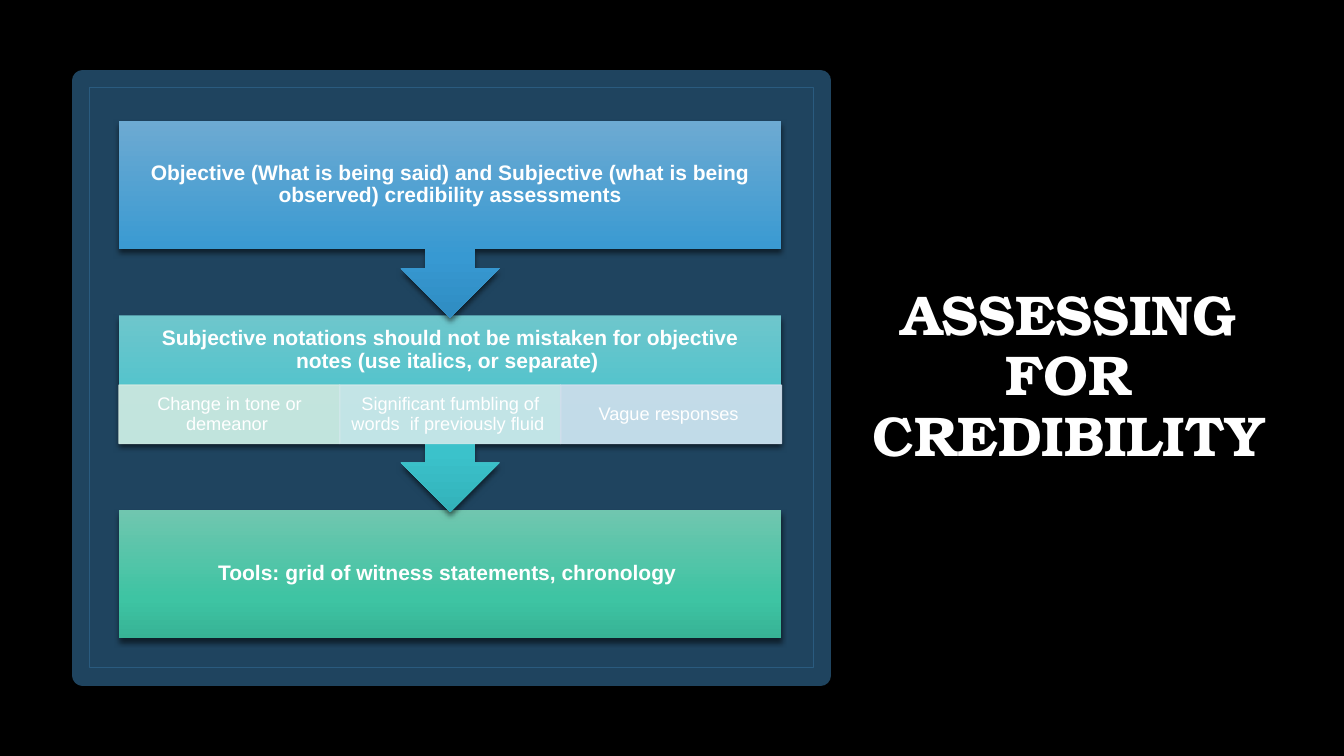
from dataclasses import dataclass

from lxml import etree
from pptx import Presentation
from pptx.dml.color import RGBColor
from pptx.enum.shapes import MSO_SHAPE
from pptx.enum.text import MSO_ANCHOR, PP_ALIGN
from pptx.oxml.ns import qn
from pptx.util import Inches, Pt

RECTANGLE = MSO_SHAPE.RECTANGLE
CALLOUT = MSO_SHAPE.DOWN_ARROW_CALLOUT
MIDDLE = MSO_ANCHOR.MIDDLE
CENTER = PP_ALIGN.CENTER

TITLE = "ASSESSING FOR CREDIBILITY"
STEPS = [
    {
        "heading": "Objective (What is being said) and Subjective (what is being observed) credibility assessments",
        "gradient": [(0, "6DAAD2"), (69, "3799D2"), (100, "2F8CC2")],
        "signs": [],
    },
    {
        "heading": "Subjective notations should not be mistaken for objective notes (use italics, or separate) ",
        "gradient": [(0, "6EC6CC"), (69, "3BC2CB"), (100, "33B2BA")],
        "signs": [
            ("Change in tone or demeanor ", "D0E8E0"),
            ("Significant fumbling of words  if previously fluid ", "D0E8EA"),
            ("Vague responses ", "D0DEEC"),
        ],
    },
    {
        "heading": "Tools: grid of witness statements, chronology ",
        "gradient": [(0, "70C6AF"), (69, "3EC4A3"), (100, "37B395")],
        "signs": [],
    },
]


@dataclass(frozen=True)
class Theme:
    background: str = "000000"
    panel: str = "1F445F"
    frame: str = "2A5B7F"
    text: str = "FFFFFF"
    shadow: str = "000000"
    title_font: str = "TeX Gyre Bonum"
    body_font: str = "Arial"
    title_size: int = 40
    heading_size: int = 15
    sign_size: int = 13


THEME = Theme()

STEP_LEFT, STEP_TOP, STEP_WIDTH = 1.18, 1.2, 6.57
STEP_PITCH, BOX_HEIGHT, CALLOUT_HEIGHT = 1.93, 1.27, 1.95
SIGN_OFFSET, SIGN_HEIGHT = 0.69, 0.58


def write(holder, text, *, size, font=THEME.body_font, bold=False, insets=(0, 0, 0, 0)):
    frame = holder.text_frame
    frame.word_wrap = True
    frame.vertical_anchor = MIDDLE
    frame.margin_left, frame.margin_top, frame.margin_right, frame.margin_bottom = map(Inches, insets)
    paragraph = frame.paragraphs[0]
    paragraph.alignment = CENTER
    paragraph.line_spacing = 0.9
    run = paragraph.add_run()
    run.text = text
    run.font.name = font
    run.font.size = Pt(size)
    run.font.bold = bold
    run.font.color.rgb = RGBColor.from_string(THEME.text)


def add_block(shapes, preset, box, *, fill=None, line=None, line_width=1):
    block = shapes.add_shape(preset, *map(Inches, box))
    block.shadow.inherit = False
    if fill:
        block.fill.solid()
        block.fill.fore_color.rgb = RGBColor.from_string(fill)
    else:
        block.fill.background()
    if line:
        block.line.color.rgb = RGBColor.from_string(line)
        block.line.width = Pt(line_width)
    else:
        block.line.fill.background()
    return block


def add_color(parent, color, alpha=None):
    element = etree.SubElement(parent, qn("a:srgbClr"), val=color)
    if alpha is not None:
        etree.SubElement(element, qn("a:alpha"), val=str(alpha * 1000))


def cast_shadow(block, alpha, blur, distance):
    effects = block.element.spPr.find(qn("a:effectLst"))
    shadow = etree.SubElement(
        effects, qn("a:outerShdw"), blurRad=str(Pt(blur)), dist=str(Pt(distance)),
        dir="5400000", algn="ctr", rotWithShape="0",
    )
    add_color(shadow, THEME.shadow, alpha)


def shade(block, gradient):
    block.fill.gradient()
    block.fill.gradient_angle = 270
    stops = block.element.spPr.find(".//" + qn("a:gsLst"))
    for stop in list(stops):
        stops.remove(stop)
    for position, color in gradient:
        add_color(etree.SubElement(stops, qn("a:gs"), pos=str(position * 1000)), color)


def make_translucent(block, alpha):
    for color in block.element.spPr.iter(qn("a:srgbClr")):
        etree.SubElement(color, qn("a:alpha"), val=str(alpha * 1000))


def add_step(shapes, step, top, is_last):
    preset, height = (RECTANGLE, BOX_HEIGHT) if is_last else (CALLOUT, CALLOUT_HEIGHT)
    block = add_block(shapes, preset, (STEP_LEFT, top, STEP_WIDTH, height))
    shade(block, step["gradient"])
    cast_shadow(block, 54, 4, 3)
    signs = step["signs"]
    bottom_inset = 0.12 + (BOX_HEIGHT - SIGN_OFFSET if signs else 0)
    write(block, step["heading"], size=THEME.heading_size, bold=True,
          insets=(0.12, 0.12, 0.12, bottom_inset))
    for column, (sign, tint) in enumerate(signs):
        width = STEP_WIDTH / len(signs)
        box = (STEP_LEFT + column * width, top + SIGN_OFFSET, width, SIGN_HEIGHT)
        cell = add_block(shapes, RECTANGLE, box, fill=tint, line=tint)
        make_translucent(cell, 90)
        write(cell, sign, size=THEME.sign_size, insets=(0.1, 0.02, 0.1, 0.02))


def main():
    deck = Presentation()
    deck.slide_width, deck.slide_height = Inches(13.33), Inches(7.5)
    slide = deck.slides.add_slide(deck.slide_layouts[5])
    slide.background.fill.solid()
    slide.background.fill.fore_color.rgb = RGBColor.from_string(THEME.background)

    title = slide.shapes.title
    title.left, title.top, title.width, title.height = map(Inches, (8.61, 0.69, 3.98, 6.11))
    write(title, TITLE, size=THEME.title_size, font=THEME.title_font, bold=True)

    panel = add_block(slide.shapes, RECTANGLE, (0.82, 0.8, 7.32, 5.9),
                      fill=THEME.panel, line=THEME.panel, line_width=15)
    cast_shadow(panel, 40, 4.3, 1.4)
    add_block(slide.shapes, RECTANGLE, (0.89, 0.87, 7.18, 5.75), line=THEME.frame)

    diagram = slide.shapes.add_group_shape()
    last = len(STEPS) - 1
    for index, step in reversed(list(enumerate(STEPS))):
        add_step(diagram.shapes, step, STEP_TOP + index * STEP_PITCH, index == last)

    deck.save("out.pptx")


if __name__ == "__main__":
    main()
